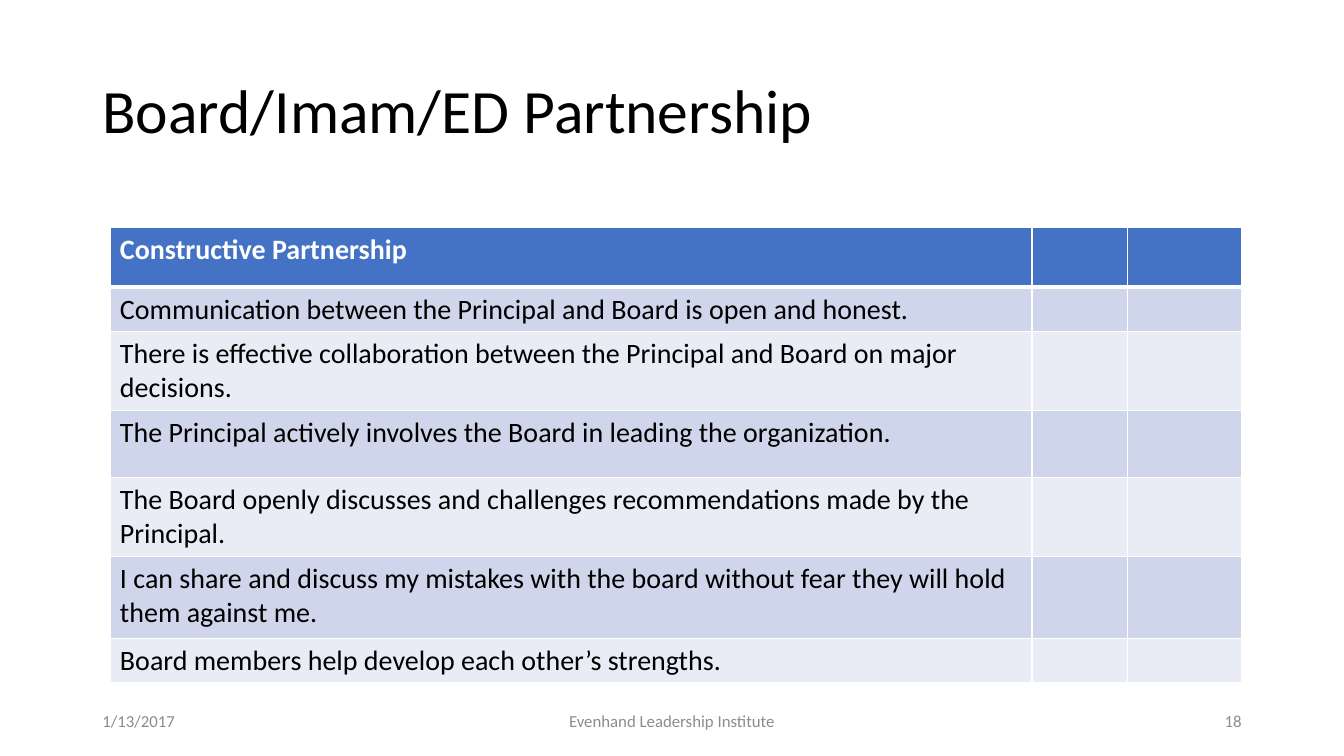
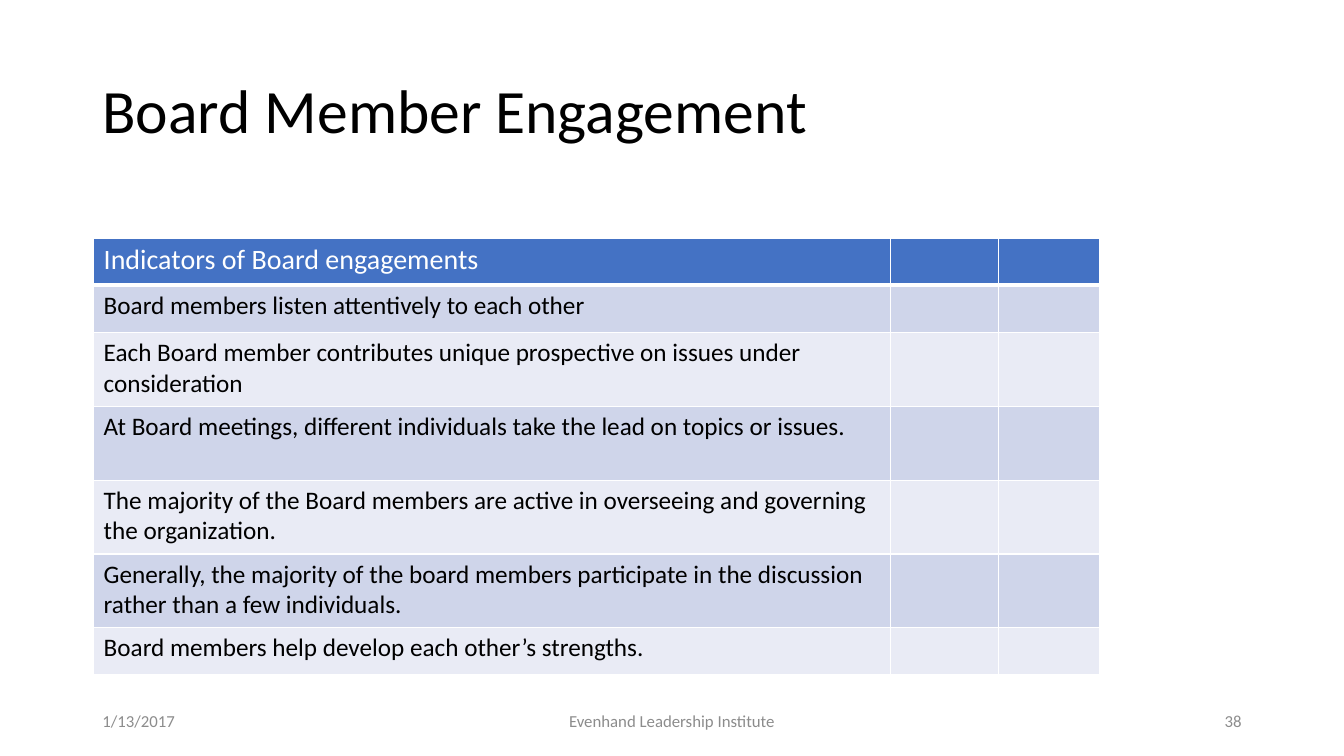
from dataclasses import dataclass

from lxml import etree
from pptx import Presentation
from pptx.dml.color import RGBColor
from pptx.enum import text
from pptx.oxml import ns
from pptx.util import Cm, Pt


@dataclass(frozen=True)
class Theme:
    font: str = "Calibri"
    ink: str = "000000"
    white: str = "FFFFFF"
    muted: str = "8C8C8C"
    header: str = "4472C4"
    bands: tuple = ("CFD5EA", "E9EBF5")
    title_size: int = 44
    header_size: int = 20
    footer_size: int = 12
    thin: int = 1
    thick: int = 3


THEME = Theme()
MARGIN, CONTENT_WIDTH = 2.33, 29.21
DATE, ORGANIZATION = "1/13/2017", "Evenhand Leadership Institute"

# Slide content, lengths in centimetres
SLIDES = [
    dict(
        title="Board/Imam/ED Partnership",
        number="18",
        at=(2.77, 5.74),
        columns=(23.24, 2.41, 2.87),
        heights=(1.5, 1.09, 1.8, 1.7, 1.8, 2.06, 1.09),
        size=20,
        bold_header=True,
        rows=(
            "Constructive Partnership",
            "Communication between the Principal and Board is open and honest.",
            "There is effective collaboration between the Principal and Board on major decisions.",
            "The Principal actively involves the Board in leading the organization.",
            "The Board openly discusses and challenges recommendations made by the Principal.",
            "I can share and discuss my mistakes with the board without fear they will hold them against me.",
            "Board members help develop each other’s strengths.",
        ),
    ),
    dict(
        title="Board Member Engagement",
        number="38",
        at=(2.36, 6),
        columns=(20.09, 2.72, 2.54),
        heights=(1.19, 1.19, 1.86, 1.86, 1.86, 1.86, 1.19),
        size=18,
        bold_header=False,
        rows=(
            "Indicators of Board engagements",
            "Board members listen attentively to each other",
            "Each Board member contributes unique prospective on issues under consideration",
            "At Board meetings, different individuals take the lead on topics or issues.",
            "The majority of the Board members are active in overseeing and governing the organization.",
            "Generally, the majority of the board members participate in the discussion rather than a few individuals.",
            "Board members help develop each other’s strengths.",
        ),
    ),
]


# Text
def write(tf, content, size, color, align=text.PP_ALIGN.LEFT, bold=False):
    tf.text = content
    p = tf.paragraphs[0]
    p.alignment = align
    for r in p.runs:
        r.font.name = THEME.font
        r.font.size = Pt(size)
        r.font.bold = bold
        r.font.color.rgb = RGBColor.from_string(color)


def set_title(s, content):
    sp = s.shapes.title
    sp.left, sp.top, sp.width, sp.height = map(Cm, (MARGIN, 1.02, CONTENT_WIDTH, 3.68))
    tf = sp.text_frame
    write(tf, content, THEME.title_size, THEME.ink)
    tf.auto_size = text.MSO_AUTO_SIZE.NONE
    tf.vertical_anchor = text.MSO_ANCHOR.MIDDLE
    tf.paragraphs[0].line_spacing = 0.9


def add_footer(s, number):
    side, middle = 7.62, 11.43
    parts = (
        (DATE, MARGIN, side, text.PP_ALIGN.LEFT),
        (ORGANIZATION, MARGIN + (CONTENT_WIDTH - middle) / 2, middle, text.PP_ALIGN.CENTER),
        (number, MARGIN + CONTENT_WIDTH - side, side, text.PP_ALIGN.RIGHT),
    )
    for content, left, width, align in parts:
        tf = s.shapes.add_textbox(Cm(left), Cm(17.65), Cm(width), Cm(1.02)).text_frame
        tf.word_wrap = True
        tf.vertical_anchor = text.MSO_ANCHOR.MIDDLE
        write(tf, content, THEME.footer_size, THEME.muted, align)


# Table
def set_borders(cell, bottom):
    tc_pr = cell._tc.get_or_add_tcPr()
    widths = dict(lnL=THEME.thin, lnR=THEME.thin, lnT=THEME.thin, lnB=bottom)
    for side, width in widths.items():
        line = etree.SubElement(tc_pr, ns.qn(f"a:{side}"), w=str(Pt(width)))
        fill = etree.SubElement(line, ns.qn("a:solidFill"))
        etree.SubElement(fill, ns.qn("a:srgbClr"), val=THEME.white)


def add_checklist(s, at, columns, heights, size, bold_header, rows):
    left, top = map(Cm, at)
    frame = s.shapes.add_table(len(rows), len(columns), left, top,
                               Cm(sum(columns)), Cm(sum(heights)))
    table = frame.table
    for column, width in zip(table.columns, columns):
        column.width = Cm(width)
    for i, (row, height, content) in enumerate(zip(table.rows, heights, rows)):
        row.height = Cm(height)
        is_header = i == 0
        color = THEME.header if is_header else THEME.bands[(i - 1) % 2]
        for cell in row.cells:
            set_borders(cell, THEME.thick if is_header else THEME.thin)
            cell.fill.solid()
            cell.fill.fore_color.rgb = RGBColor.from_string(color)
        tf = row.cells[0].text_frame
        if is_header:
            write(tf, content, THEME.header_size, THEME.white, bold=bold_header)
        else:
            write(tf, content, size, THEME.ink)


def add_slide(prs, title, number, **checklist):
    s = prs.slides.add_slide(prs.slide_layouts.get_by_name("Title Only"))
    set_title(s, title)
    add_checklist(s, **checklist)
    add_footer(s, number)


def main():
    prs = Presentation()
    prs.slide_width, prs.slide_height = Cm(33.87), Cm(19.05)
    for content in SLIDES:
        add_slide(prs, **content)
    prs.save("out.pptx")


if __name__ == "__main__":
    main()
